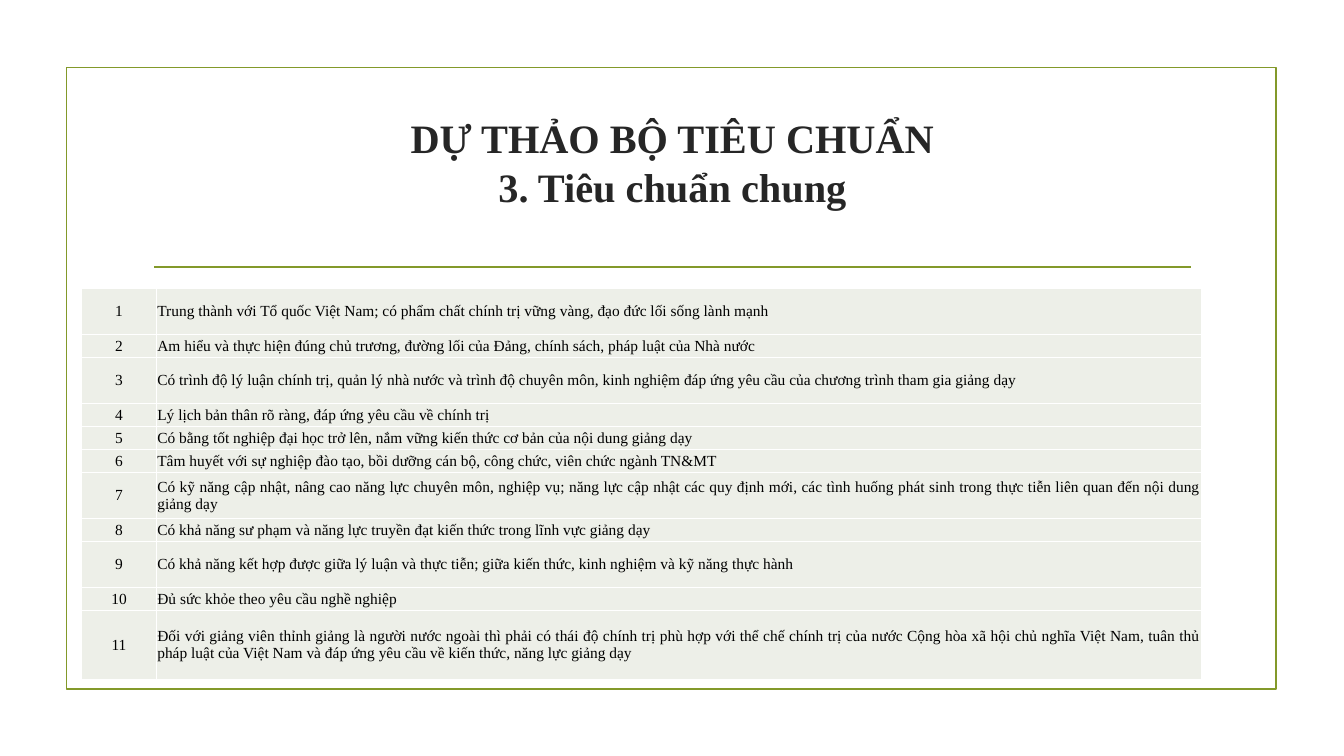
import dataclasses

import pptx
import pptx.dml.color
import pptx.enum.shapes
import pptx.enum.text
import pptx.oxml
import pptx.oxml.ns
import pptx.util

ALIGN = pptx.enum.text.PP_ALIGN
MIDDLE = pptx.enum.text.MSO_ANCHOR.MIDDLE

CRITERIA = [
    (2, "Trung thành với Tổ quốc Việt Nam; có phẩm chất chính trị vững vàng, đạo đức lối sống lành mạnh"),
    (1, "Am hiểu và thực hiện đúng chủ trương, đường lối của Đảng, chính sách, pháp luật của Nhà nước"),
    (2, "Có trình độ lý luận chính trị, quản lý nhà nước và trình độ chuyên môn, kinh nghiệm đáp ứng yêu cầu "
        "của chương trình tham gia giảng dạy"),
    (1, "Lý lịch bản thân rõ ràng, đáp ứng yêu cầu về chính trị"),
    (1, "Có bằng tốt nghiệp đại học trở lên, nắm vững kiến thức cơ bản của nội dung giảng dạy"),
    (1, "Tâm huyết với sự nghiệp đào tạo, bồi dưỡng cán bộ, công chức, viên chức ngành TN&MT"),
    (2, "Có kỹ năng cập nhật, nâng cao năng lực chuyên môn, nghiệp vụ; năng lực cập nhật các quy định mới, "
        "các tình huống phát sinh trong thực tiễn liên quan đến nội dung giảng dạy"),
    (1, "Có khả năng sư phạm và năng lực truyền đạt kiến thức trong lĩnh vực giảng dạy"),
    (2, "Có khả năng kết hợp được giữa lý luận và thực tiễn; giữa kiến thức, kinh nghiệm và kỹ năng thực hành"),
    (1, "Đủ sức khỏe theo yêu cầu nghề nghiệp"),
    (3, "Đối với giảng viên thỉnh giảng là người nước ngoài thì phải có thái độ chính trị phù hợp với thể chế "
        "chính trị của nước Cộng hòa xã hội chủ nghĩa Việt Nam, tuân thủ pháp luật của Việt Nam và đáp ứng "
        "yêu cầu về kiến thức, năng lực giảng dạy"),
]


@dataclasses.dataclass(frozen=True)
class Theme:
    """Colours, font and type sizes of the slide."""
    font: str = "Times New Roman"
    accent: str = "83992A"
    heading: str = "262626"
    body: str = "000000"
    cell: str = "EDEFE8"
    border: str = "FFFFFF"
    heading_size: float = 28.8
    body_size: float = 11
    line_width: float = 1.25
    border_width: float = 1


class Page:
    """One slide with its theme; lengths are percentages of the slide's size."""

    def __init__(self, deck, theme):
        self.deck, self.theme = deck, theme
        self.slide = deck.slides.add_slide(deck.slide_layouts.get_by_name("Title Only"))

    def across(self, share):
        return round(self.deck.slide_width * share / 100)

    def down(self, share):
        return round(self.deck.slide_height * share / 100)

    def area(self, left, top, width, height):
        return self.across(left), self.down(top), self.across(width), self.down(height)

    def outline(self, shape):
        shape.line.color.rgb = pptx.dml.color.RGBColor.from_string(self.theme.accent)
        shape.line.width = pptx.util.Pt(self.theme.line_width)

    def fill_text(self, frame, text, align, size, color, bold=False):
        frame.text = text
        paragraph = frame.paragraphs[0]
        paragraph.alignment = align
        style = {"name": self.theme.font, "size": pptx.util.Pt(size), "bold": bold}
        for span in paragraph.runs:
            for name, value in style.items():
                setattr(span.font, name, value)
            span.font.color.rgb = pptx.dml.color.RGBColor.from_string(color)

    def frame(self, *shares):
        box = self.slide.shapes.add_shape(pptx.enum.shapes.MSO_SHAPE.RECTANGLE, *self.area(*shares))
        box.shadow.inherit = False
        box.fill.background()
        self.outline(box)

    def rule(self, start, end, height):
        line = self.slide.shapes.add_connector(
            pptx.enum.shapes.MSO_CONNECTOR.STRAIGHT,
            self.across(start), self.down(height), self.across(end), self.down(height))
        self.outline(line)
        properties = line.element.spPr
        properties.append(properties.makeelement(pptx.oxml.ns.qn("a:effectLst"), {}))

    def title(self, text, *shares):
        box = self.slide.shapes.title
        for name, value in zip(("left", "top", "width", "height"), self.area(*shares)):
            setattr(box, name, value)
        layout = {"word_wrap": True, "vertical_anchor": MIDDLE,
                  "auto_size": pptx.enum.text.MSO_AUTO_SIZE.NONE}
        for name, value in layout.items():
            setattr(box.text_frame, name, value)
        self.fill_text(box.text_frame, text, ALIGN.CENTER, self.theme.heading_size, self.theme.heading, True)
        box.element.getparent().append(box.element)

    def border(self, cell):
        properties = cell._tc.get_or_add_tcPr()
        width = pptx.util.Pt(self.theme.border_width)
        for side in "LRTB":
            properties.append(pptx.oxml.parse_xml(
                f'<a:ln{side} {pptx.oxml.ns.nsdecls("a")} w="{width}"><a:solidFill>'
                f'<a:srgbClr val="{self.theme.border}"/></a:solidFill></a:ln{side}>'))

    def table(self, items, number_share, *shares):
        left, top, width, height = self.area(*shares)
        table = self.slide.shapes.add_table(len(items), 2, left, top, width, height).table
        table.first_row = table.horz_banding = False
        table.columns[0].width = self.across(number_share)
        table.columns[1].width = width - self.across(number_share)
        unit = height / sum(units for units, _ in items)
        inset = pptx.util.Inches(0.01)
        layout = {"vertical_anchor": MIDDLE, "margin_left": inset, "margin_right": inset,
                  "margin_top": inset, "margin_bottom": 0}
        for index, (units, text) in enumerate(items):
            table.rows[index].height = round(units * unit)
            entries = (str(index + 1), ALIGN.CENTER), (text, ALIGN.JUSTIFY)
            for column, (entry, align) in enumerate(entries):
                cell = table.cell(index, column)
                for name, value in layout.items():
                    setattr(cell, name, value)
                self.border(cell)
                cell.fill.solid()
                cell.fill.fore_color.rgb = pptx.dml.color.RGBColor.from_string(self.theme.cell)
                self.fill_text(cell.text_frame, entry, align, self.theme.body_size, self.theme.body)


def main():
    deck = pptx.Presentation()
    deck.slide_width, deck.slide_height = pptx.util.Inches(13.33), pptx.util.Inches(7.5)
    page = Page(deck, Theme())
    page.frame(4.95, 8.93, 90, 82.27)
    page.rule(11.48, 88.6, 35.33)
    page.title("DỰ THẢO BỘ TIÊU CHUẨN\v3. Tiêu chuẩn chung", 10.65, 14.27, 78.77, 14.27)
    page.table(CRITERIA, 5.55, 6.08, 38.13, 83.35, 51.73)
    deck.save("out.pptx")


if __name__ == "__main__":
    main()
